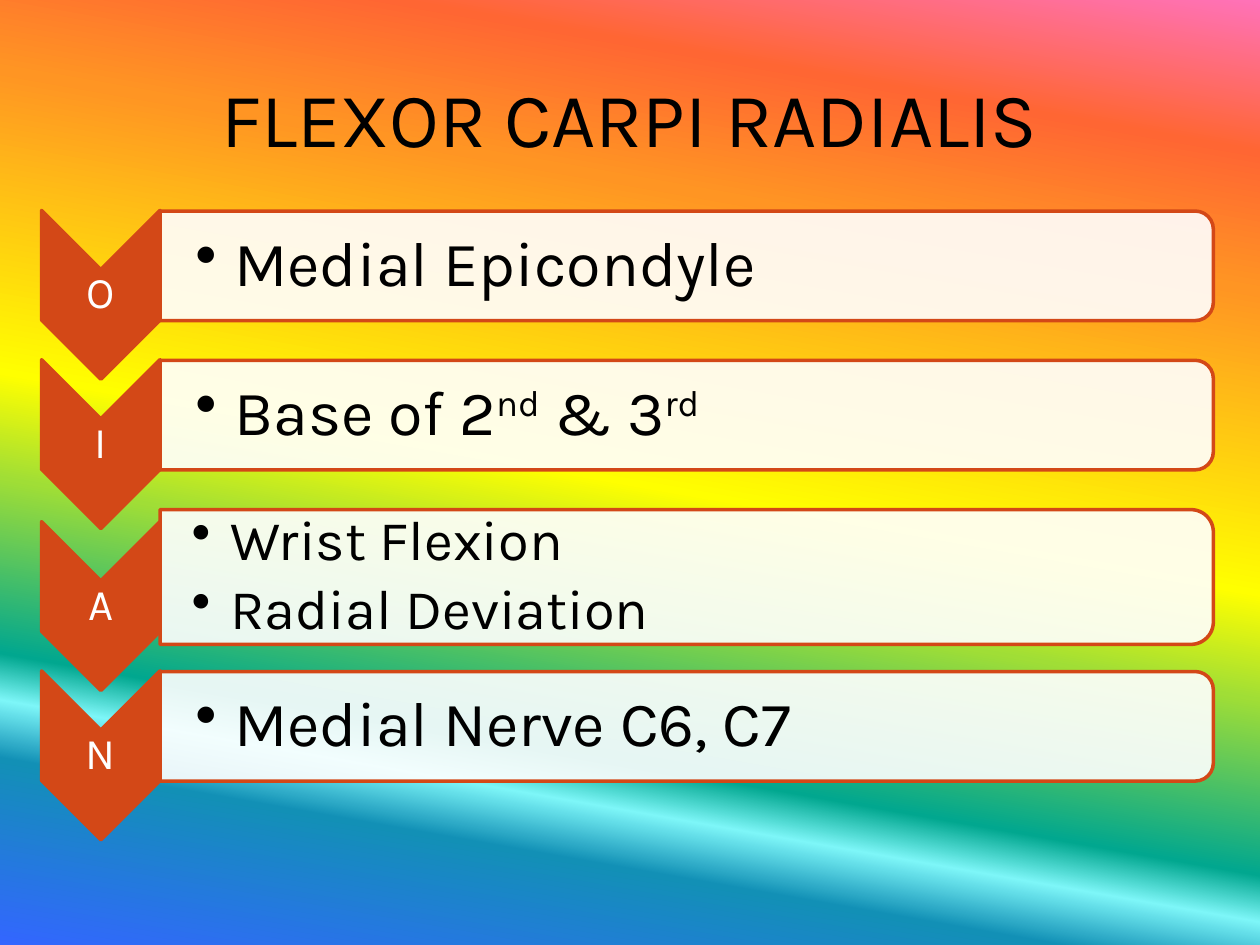
from lxml.etree import SubElement
from pptx import Presentation
from pptx.dml.color import RGBColor
from pptx.enum.shapes import MSO_SHAPE as Preset
from pptx.enum.text import MSO_ANCHOR as Anchor, MSO_AUTO_SIZE as AutoSize, PP_ALIGN as Align
from pptx.oxml.ns import qn
from pptx.util import Inches, Pt

TITLE = "FLEXOR CARPI RADIALIS"
FONT, ACCENT, BLACK, WHITE = "Karla", "D34817", "000000", "FFFFFF"
GRADIENT_ANGLE = 100
GRADIENT = [(0, "FF72B9"), (13, "FF6633"), (25, "FF9523"), (51, "FFFF00"), (60, "A0DE36"),
            (75, "01A78F"), (79, "7DF6F8"), (84, "1290B6"), (100, "3366FF")]
# Letter, extra space above, card height, text size, left inset, bullets.
# Each bullet is a list of (text, is superscript).
ROWS = [
    ("O", 0, 0.87, 36, 0.28, [[("Medial Epicondyle", False)]]),
    ("I", 0, 0.87, 36, 0.28, [[("Base of 2", False), ("nd", True), (" & 3", False), ("rd", True)]]),
    ("A", 0.1, 1.07, 32, 0.25, [[("Wrist Flexion", False)], [("Radial Deviation", False)]]),
    ("N", 0, 0.87, 36, 0.28, [[("Medial Nerve C6, C7", False)]]),
]
FIRST_CENTER, PITCH = 2.11, 1.185
CARD_LEFT, CARD_WIDTH = 1.27, 8.36
CHEVRON_CENTER, CHEVRON_DROP = 0.8, 0.23
CHEVRON_LENGTH, CHEVRON_WIDTH = 1.34, 0.94


def color(hex_value):
    return RGBColor.from_string(hex_value)


def set_gradient_background(slide):
    fill = slide.background.fill
    fill.gradient()
    properties = slide.background._cSld.bg.bgPr
    gradient = properties.find(qn("a:gradFill"))
    stops = gradient.find(qn("a:gsLst"))
    for stop in list(stops):
        stops.remove(stop)
    for position, hex_value in GRADIENT:
        stop = SubElement(stops, qn("a:gs"), pos=str(position * 1000))
        SubElement(stop, qn("a:srgbClr"), val=hex_value)
    linear = gradient.find(qn("a:lin"))
    linear.set("ang", str(GRADIENT_ANGLE * 60000))
    linear.set("scaled", "0")


def add_turned_shape(slide, preset, center_x, center_y, length, width, fill, opacity=100):
    """Add a shape turned a quarter clockwise; length and width are those before turning."""
    shape = slide.shapes.add_shape(preset, Inches(center_x - length / 2), Inches(center_y - width / 2),
                                   Inches(length), Inches(width))
    shape.rotation = 90
    shape.shadow.inherit = False
    shape.fill.solid()
    shape.fill.fore_color.rgb = color(fill)
    if opacity < 100:
        fill_color = shape.fill._xPr.find(qn("a:solidFill"))[0]
        SubElement(fill_color, qn("a:alpha"), val=str(opacity * 1000))
    shape.line.color.rgb = color(ACCENT)
    shape.line.width = Pt(2)


def add_text_frame(slide, left, center_y, width, height, margin, left_margin):
    box = slide.shapes.add_textbox(Inches(left), Inches(center_y - height / 2),
                                   Inches(width), Inches(height))
    frame = box.text_frame
    frame.word_wrap = True
    frame.vertical_anchor = Anchor.MIDDLE
    frame.margin_top = frame.margin_right = frame.margin_bottom = Inches(margin)
    frame.margin_left = Inches(left_margin)
    return frame


def format_run(run, size, hex_value):
    run.font.name = FONT
    run.font.size = Pt(size)
    run.font.color.rgb = color(hex_value)


def set_bullet(paragraph):
    paragraph.line_spacing = 0.9
    properties = paragraph._p.get_or_add_pPr()
    properties.set("marL", str(Inches(0.31)))
    properties.set("indent", str(-Inches(0.31)))
    space_after = SubElement(properties, qn("a:spcAft"))
    SubElement(space_after, qn("a:spcPct"), val="15000")
    SubElement(properties, qn("a:buChar"), char="•")


def add_letter(slide, letter, center_y):
    add_turned_shape(slide, Preset.CHEVRON, CHEVRON_CENTER, center_y,
                     CHEVRON_LENGTH, CHEVRON_WIDTH, ACCENT)
    frame = add_text_frame(slide, CHEVRON_CENTER - CHEVRON_WIDTH / 2, center_y,
                           CHEVRON_WIDTH, 0.4, 0.02, 0.02)
    frame.text = letter
    paragraph = frame.paragraphs[0]
    paragraph.alignment = Align.CENTER
    paragraph.line_spacing = 0.9
    format_run(paragraph.runs[0], 25, WHITE)


def add_card(slide, center_y, height, size, inset, bullets):
    add_turned_shape(slide, Preset.ROUND_2_SAME_RECTANGLE, CARD_LEFT + CARD_WIDTH / 2, center_y,
                     height, CARD_WIDTH, WHITE, opacity=90)
    frame = add_text_frame(slide, CARD_LEFT, center_y, CARD_WIDTH - 0.04, height - 0.1, 0.03, inset)
    for index, pieces in enumerate(bullets):
        paragraph = frame.add_paragraph() if index else frame.paragraphs[0]
        paragraph.level = 1
        set_bullet(paragraph)
        for text, superscript in pieces:
            run = paragraph.add_run()
            run.text = text
            format_run(run, size, BLACK)
            if superscript:
                run._r.get_or_add_rPr().set("baseline", "30000")


def add_title(slide):
    title = slide.shapes.title
    title.left, title.top, title.width, title.height = map(Inches, (0.5, 0.3, 9, 1.25))
    frame = title.text_frame
    frame.text = TITLE
    frame.auto_size = AutoSize.NONE
    frame.vertical_anchor = Anchor.MIDDLE
    frame.paragraphs[0].alignment = Align.CENTER
    format_run(frame.paragraphs[0].runs[0], 44, BLACK)


def main():
    presentation = Presentation()
    presentation.slide_width, presentation.slide_height = Inches(10), Inches(7.5)
    slide = presentation.slides.add_slide(presentation.slide_layouts[5])
    set_gradient_background(slide)
    add_title(slide)
    center_y = FIRST_CENTER
    for letter, extra, height, size, inset, bullets in ROWS:
        center_y += extra
        add_letter(slide, letter, center_y + CHEVRON_DROP)
        add_card(slide, center_y, height, size, inset, bullets)
        center_y += PITCH
    presentation.save("out.pptx")


if __name__ == "__main__":
    main()
